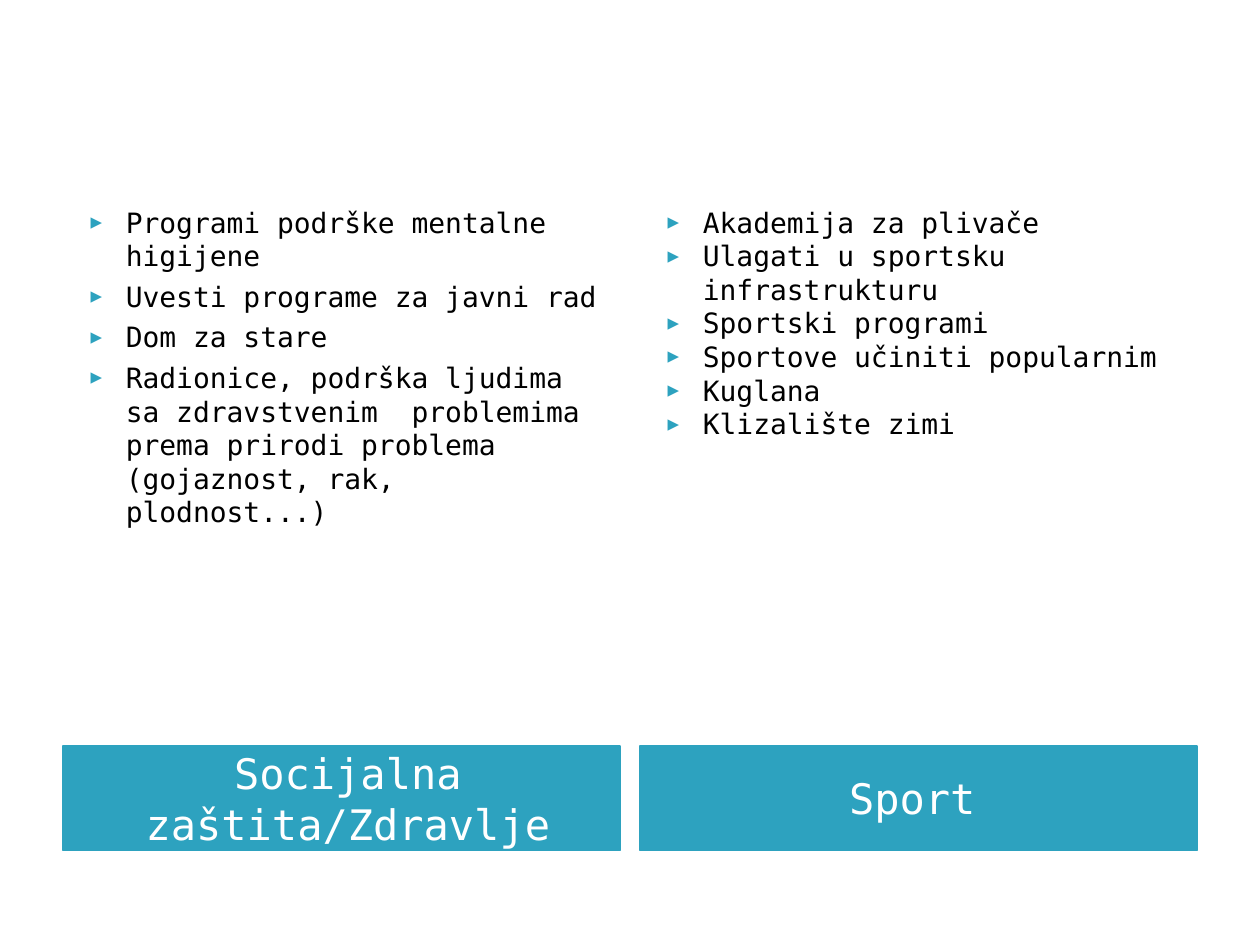
from lxml.etree import SubElement
from pptx import Presentation
from pptx.dml.color import RGBColor
from pptx.enum.shapes import MSO_SHAPE as Shape
from pptx.enum.text import MSO_ANCHOR as Anchor, PP_ALIGN as Align
from pptx.oxml.ns import qn
from pptx.util import Inches, Pt

COLUMN_LEFTS = (0.5, 5.08)
COLUMN_WIDTH = 4.42

# Heading, bullet items, space between items in points
COLUMNS = [
    ("Socijalna zaštita/Zdravlje", [
        "Programi podrške mentalne higijene",
        "Uvesti programe za javni rad",
        "Dom za stare",
        "Radionice, podrška ljudima sa zdravstvenim  problemima "
        "prema prirodi problema (gojaznost, rak, plodnost...)",
    ], 4),
    ("Sport ", [
        "Akademija za plivače",
        "Ulagati u sportsku infrastrukturu",
        "Sportski programi",
        "Sportove učiniti popularnim",
        "Kuglana",
        "Klizalište zimi",
    ], 0),
]


def color(hex_value):
    return RGBColor.from_string(hex_value)


class SlideBuilder:
    FONT = "DejaVu Sans Mono"
    ACCENT = "2DA2BF"
    TEXT = "000000"
    LIGHT = "FFFFFF"

    def __init__(self, slide):
        self.slide = slide

    def format_runs(self, paragraph, size, hex_value):
        for run in paragraph.runs:
            run.font.name = self.FONT
            run.font.size = Pt(size)
            run.font.color.rgb = color(hex_value)

    def add_bullet(self, paragraph):
        properties = paragraph._p.get_or_add_pPr()
        properties.set("marL", str(Inches(0.4)))
        properties.set("indent", str(Inches(-0.28)))
        bullet_color = SubElement(properties, qn("a:buClr"))
        SubElement(bullet_color, qn("a:srgbClr"), val=self.ACCENT)
        SubElement(properties, qn("a:buSzPct"), val="68000")
        SubElement(properties, qn("a:buFont"), typeface=self.FONT)
        SubElement(properties, qn("a:buChar"), char="▶")

    def heading(self, text, left, top, width, height):
        shape = self.slide.shapes.add_shape(
            Shape.RECTANGLE, Inches(left), Inches(top), Inches(width), Inches(height))
        shape.shadow.inherit = False
        shape.fill.solid()
        shape.fill.fore_color.rgb = color(self.ACCENT)
        shape.line.color.rgb = color(self.ACCENT)
        shape.line.width = Pt(0.75)
        text_frame = shape.text_frame
        text_frame.word_wrap = True
        text_frame.vertical_anchor = Anchor.MIDDLE
        text_frame.margin_left = Inches(0.2)
        text_frame.text = text
        paragraph = text_frame.paragraphs[0]
        paragraph.alignment = Align.CENTER
        self.format_runs(paragraph, 24, self.LIGHT)

    def bullet_list(self, items, gap, left, top, width, height):
        box = self.slide.shapes.add_textbox(
            Inches(left), Inches(top), Inches(width), Inches(height))
        text_frame = box.text_frame
        text_frame.word_wrap = True
        text_frame.text = "\n".join(items)
        for index, paragraph in enumerate(text_frame.paragraphs):
            self.add_bullet(paragraph)
            paragraph.space_before = Pt(gap if index else 0)
            self.format_runs(paragraph, 16, self.TEXT)


def main():
    presentation = Presentation()
    presentation.slide_width = Inches(10)
    presentation.slide_height = Inches(7.5)
    blank_layout = presentation.slide_layouts[6]
    builder = SlideBuilder(presentation.slides.add_slide(blank_layout))

    # Two columns: list above, heading bar below
    for left, (heading, items, gap) in zip(COLUMN_LEFTS, COLUMNS):
        builder.heading(heading, left, 5.92, COLUMN_WIDTH, 0.83)
        builder.bullet_list(items, gap, left, 1.58, COLUMN_WIDTH, 4.31)

    presentation.save("out.pptx")


if __name__ == "__main__":
    main()
